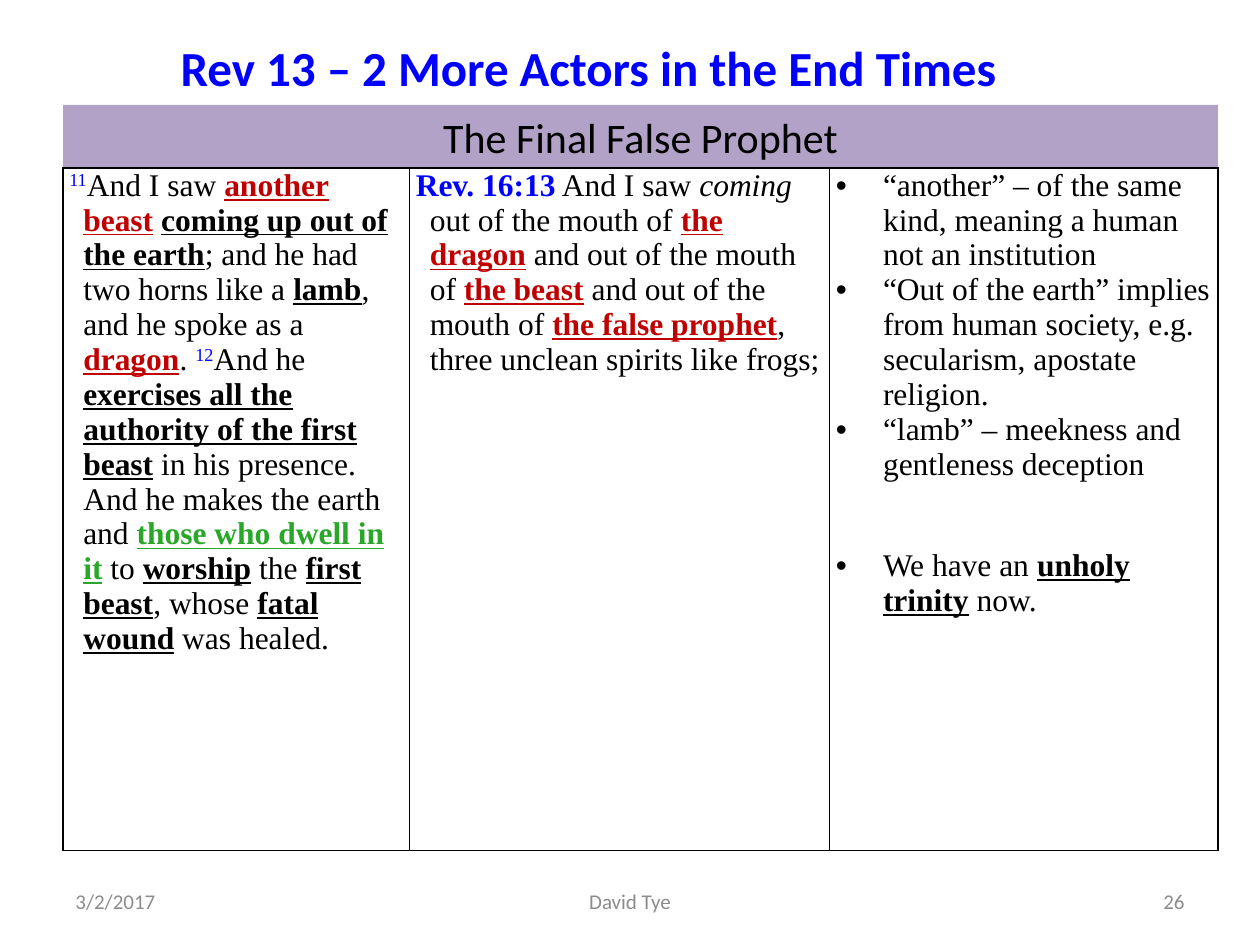
from typing import NamedTuple

from lxml.etree import SubElement
from pptx import Presentation
from pptx.dml.color import RGBColor
from pptx.enum.shapes import MSO_SHAPE as Shape
from pptx.enum.text import MSO_ANCHOR as Anchor, MSO_AUTO_SIZE as AutoSize, PP_ALIGN as Align
from pptx.oxml.ns import qn
from pptx.util import Pt

BLACK, BLUE, RED, GREEN = "000000", "0000FF", "C00000", "29A729"
LILAC, GREY = "B3A2C7", "8C8C8C"
SANS, SERIF = "Calibri", "Times New Roman"


class Words(NamedTuple):
    text: str
    color: str = BLACK
    bold: bool = False
    underline: bool = False
    italic: bool = False
    raised: bool = False


class Para(NamedTuple):
    words: list[Words]
    indent: float
    bullet: bool = False
    space_before: float = 0


class FooterPart(NamedTuple):
    text: str
    left: float
    width: float
    align: Align


def key(text: str, color: str = BLACK) -> Words:
    return Words(text, color, bold=True, underline=True)


def verse(number: str) -> Words:
    return Words(number, BLUE, raised=True)


def point(*words: Words, space_before: float = 0) -> Para:
    return Para(list(words), 27, True, space_before)


BEAST_PASSAGE = Para([
    verse("11"), Words("And I saw "), key("another", RED), Words(" "), key("beast", RED),
    Words(" "), key("coming up out of the earth"),
    Words("; and he had two horns like a "), key("lamb"),
    Words(", and he spoke as a "), key("dragon", RED), Words(". "),
    verse("12"), Words("And he "), key("exercises all the authority of the first beast"),
    Words(" in his presence. And he makes the earth and "),
    key("those who dwell in it", GREEN), Words(" to "), key("worship"), Words(" the "),
    key("first"), Words(" "), key("beast"), Words(", whose "), key("fatal wound"),
    Words(" was healed."),
], 8)
SPIRITS_PASSAGE = Para([
    Words("Rev. 16:13", BLUE, bold=True), Words(" And I saw "), Words("coming", italic=True),
    Words(" out of the mouth of "), key("the dragon", RED),
    Words(" and out of the mouth of "), key("the beast", RED),
    Words(" and out of the mouth of "), key("the false prophet", RED),
    Words(", three unclean spirits like frogs;"),
], 8)
COMMENTS = [
    point(Words("“another” – of the same kind, meaning a human not an institution")),
    point(Words("“Out of the earth” implies from human society, e.g. secularism, "
                "apostate religion.")),
    point(Words("“lamb” – meekness and gentleness deception")),
    point(Words("We have an "), key("unholy trinity"), Words(" now."), space_before=38),
]
COLUMNS = [(198, [BEAST_PASSAGE]), (240, [SPIRITS_PASSAGE]), (222, COMMENTS)]
FOOTER = [
    FooterPart("3/2/2017", 36, 168, Align.LEFT),
    FooterPart("David Tye", 246, 228, Align.CENTER),
    FooterPart("26", 516, 168, Align.RIGHT),
]


def rgb(color: str) -> RGBColor:
    return RGBColor.from_string(color)


def style(font, name: str, size: float, color: str, bold: bool = False) -> None:
    font.name, font.size, font.bold = name, Pt(size), bold
    font.color.rgb = rgb(color)


def place(shape, left: float, top: float, width: float, height: float) -> None:
    shape.left, shape.top = Pt(left), Pt(top)
    shape.width, shape.height = Pt(width), Pt(height)


def set_line(frame, text: str, size: float, color: str, align: Align, bold: bool = False) -> None:
    """Fill a frame with one line of sans text."""
    frame.text = text
    line = frame.paragraphs[0]
    line.alignment = align
    style(line.runs[0].font, SANS, size, color, bold)


def write_para(paragraph, para: Para) -> None:
    props = paragraph._p.get_or_add_pPr()
    props.set("marL", str(Pt(para.indent)))
    props.set("indent", str(-Pt(para.indent)))
    if para.space_before:
        paragraph.space_before = Pt(para.space_before)
    if para.bullet:
        SubElement(props, qn("a:buFont"), typeface="Arial")
        SubElement(props, qn("a:buChar"), char="•")
    else:
        SubElement(props, qn("a:buNone"))
    for words in para.words:
        run = paragraph.add_run()
        run.text = words.text
        style(run.font, SERIF, 18, words.color, words.bold)
        run.font.underline, run.font.italic = words.underline, words.italic
        if words.raised:
            run._r.get_or_add_rPr().set("baseline", "30000")


def add_borders(cell) -> None:
    props = cell._tc.get_or_add_tcPr()
    for index, side in enumerate(("lnL", "lnR", "lnT", "lnB")):
        line = props.makeelement(qn(f"a:{side}"), {"w": str(Pt(1))})
        props.insert(index, line)
        fill = SubElement(line, qn("a:solidFill"))
        SubElement(fill, qn("a:srgbClr"), val=BLACK)


def fill_cell(cell, paras: list[Para]) -> None:
    cell.margin_left = cell.margin_right = Pt(3.6)
    cell.margin_top = cell.margin_bottom = 0
    cell.vertical_anchor = Anchor.TOP
    cell.fill.background()
    add_borders(cell)
    frame = cell.text_frame
    for index, para in enumerate(paras):
        write_para(frame.add_paragraph() if index else frame.paragraphs[0], para)


def add_title(slide) -> None:
    title = slide.shapes.title
    place(title, 96, 18, 486, 41)
    frame = title.text_frame
    frame.word_wrap = False
    frame.auto_size = AutoSize.SHAPE_TO_FIT_TEXT
    frame.vertical_anchor = Anchor.TOP
    set_line(frame, "Rev 13 – 2 More Actors in the End Times", 28, BLUE, Align.LEFT, bold=True)


def add_banner(slide) -> None:
    banner = slide.shapes.add_shape(Shape.RECTANGLE, Pt(36), Pt(60), Pt(660), Pt(36))
    banner.shadow.inherit = False
    banner.fill.solid()
    banner.fill.fore_color.rgb = rgb(LILAC)
    banner.line.fill.background()
    banner.text_frame.word_wrap = True
    set_line(banner.text_frame, "The Final False Prophet", 24, BLACK, Align.CENTER)


def add_passages(slide) -> None:
    table = slide.shapes.add_table(1, len(COLUMNS), Pt(36), Pt(96), Pt(660), Pt(390)).table
    table.first_row = table.horz_banding = False
    for index, (width, paras) in enumerate(COLUMNS):
        table.columns[index].width = Pt(width)
        fill_cell(table.cell(0, index), paras)


def add_footer_part(slide, part: FooterPart) -> None:
    box = slide.shapes.add_textbox(Pt(part.left), Pt(500.5), Pt(part.width), Pt(28.75))
    box.text_frame.word_wrap = True
    box.text_frame.vertical_anchor = Anchor.MIDDLE
    set_line(box.text_frame, part.text, 12, GREY, part.align)


def main() -> None:
    deck = Presentation()
    deck.slide_width, deck.slide_height = Pt(720), Pt(540)
    slide = deck.slides.add_slide(deck.slide_layouts[5])
    for part in FOOTER:
        add_footer_part(slide, part)
    add_title(slide)
    add_banner(slide)
    add_passages(slide)
    deck.save("out.pptx")


if __name__ == "__main__":
    main()
